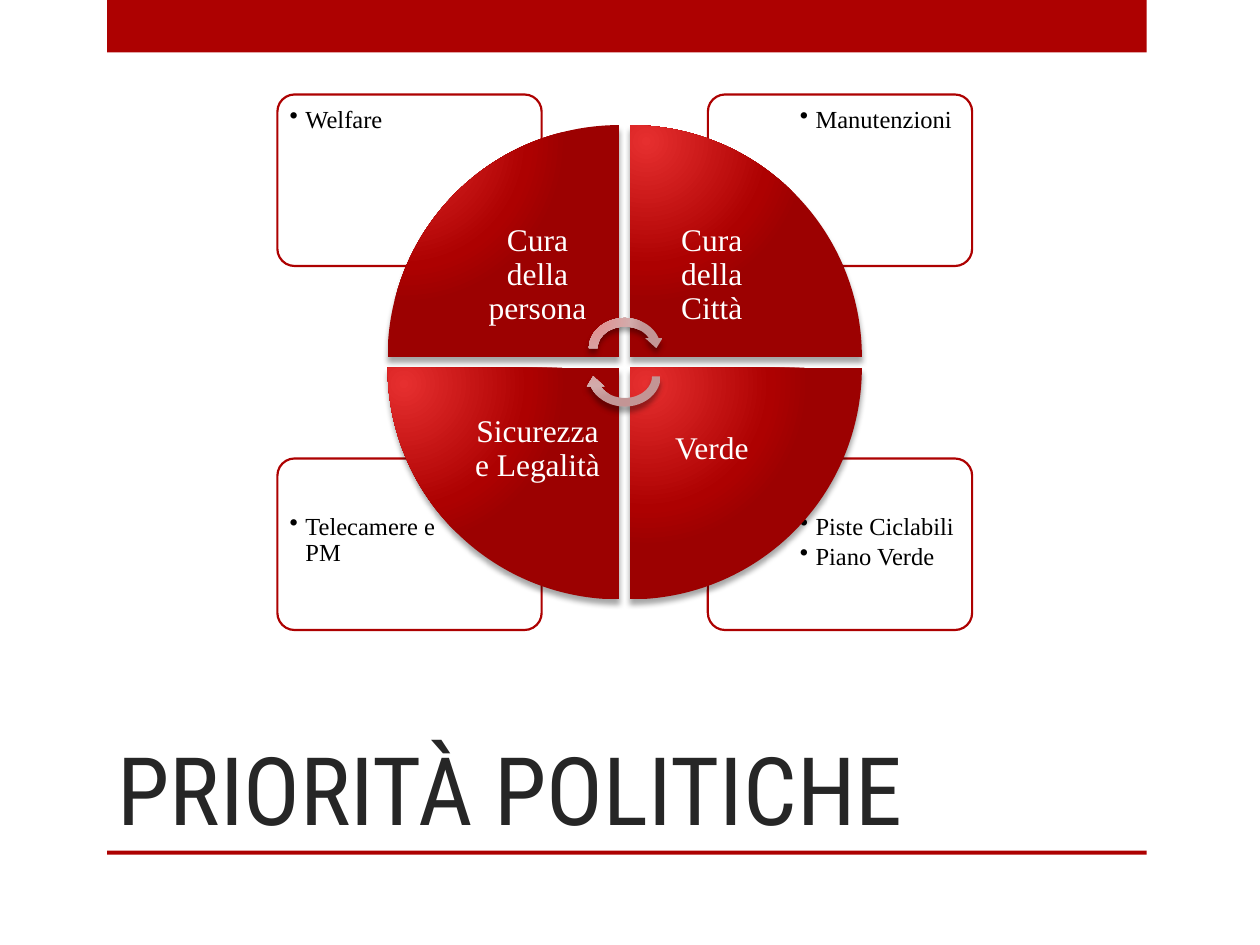
"""Build the slide of political priorities as a four-part cycle."""
import pptx
import pptx.util
import pptx.oxml
import pptx.oxml.ns
import pptx.dml.color
import pptx.enum.shapes
import pptx.enum.text

Pt = pptx.util.Pt
SHAPES = pptx.enum.shapes.MSO_SHAPE
ALIGN = pptx.enum.text.PP_ALIGN
ANCHOR = pptx.enum.text.MSO_ANCHOR
NAMESPACE = pptx.oxml.ns.nsdecls("a")

TITLE = "PRIORITÀ POLITICHE"
QUADRANTS = [
    {"column": 0, "row": 0, "turn": 0, "name": "Cura della persona", "items": ["Welfare"]},
    {"column": 1, "row": 0, "turn": 90, "name": "Cura della Città", "items": ["Manutenzioni"]},
    {"column": 1, "row": 1, "turn": 180, "name": "Verde", "items": ["Piste Ciclabili", "Piano Verde"]},
    {"column": 0, "row": 1, "turn": 270, "name": "Sicurezza e Legalità", "items": ["Telecamere e PM"]},
]
COLORS = {"red": "AD0101", "white": "FFFFFF", "black": "000000", "title": "262626"}
WEDGE_STOPS = [(0, "E62F2F"), (76, "AD0101"), (100, "9C0101")]
ARROW_STOPS = [(0, "E68989"), (76, "D3ABAB"), (100, "C39595")]
BARS = [(0, 30), (486, 2.4)]
CENTER_X, CENTER_Y = 357, 207
PANEL = (47.5, 55, 151, 98)
ITEMS = (95, 81.7, 101.5, 69)
WEDGE = (3, 3, 132.5, 132.5)
NAME = (3, 3, 93.6, 93.6)
ARROW_WIDTH, ARROW_HEIGHT, ARROW_SHIFT = 46, 39.6, 8


def color(name):
    return pptx.dml.color.RGBColor.from_string(COLORS[name])


def place(quadrant, size):
    """Mirror a box about the cycle's center and return its frame."""
    gap_x, gap_y, width, height = size
    left = CENTER_X + (gap_x if quadrant["column"] else -gap_x - width)
    top = CENTER_Y + (gap_y if quadrant["row"] else -gap_y - height)
    return Pt(left), Pt(top), Pt(width), Pt(height)


def add_solid(page, kind, frame, fill):
    shape = page.shapes.add_shape(kind, *frame)
    shape.shadow.inherit = False
    shape.fill.solid()
    shape.fill.fore_color.rgb = color(fill)
    shape.line.fill.background()
    return shape


def add_glossy(page, kind, frame, stops, turn):
    shape = add_solid(page, kind, frame, "red")
    shape.rotation = turn
    marks = "".join(
        f'<a:gs pos="{share * 1000}"><a:srgbClr val="{tone}"/></a:gs>' for share, tone in stops
    )
    gradient = pptx.oxml.parse_xml(
        f'<a:gradFill {NAMESPACE} rotWithShape="0"><a:gsLst>{marks}</a:gsLst><a:path path="circle">'
        '<a:fillToRect l="15000" t="15000" r="100000" b="100000"/></a:path></a:gradFill>'
    )
    shadow = pptx.oxml.parse_xml(
        f'<a:outerShdw {NAMESPACE} blurRad="{Pt(3)}" dist="{Pt(3)}" dir="5400000" rotWithShape="0">'
        f'<a:srgbClr val="{COLORS["black"]}"><a:alpha val="35000"/></a:srgbClr></a:outerShdw>'
    )
    properties = shape.element.spPr
    properties.replace(properties.find(pptx.oxml.ns.qn("a:solidFill")), gradient)
    properties.find(pptx.oxml.ns.qn("a:effectLst")).append(shadow)


def add_text(page, frame, lines, size, tone, inset, after):
    box = page.shapes.add_textbox(*frame).text_frame
    box.word_wrap = True
    box.margin_left = box.margin_right = box.margin_top = box.margin_bottom = Pt(inset)
    box.text = "\n".join(lines)
    for para in box.paragraphs:
        para.line_spacing = 0.9
        para.space_after = Pt(after)
        para.font.name = "Times New Roman"
        para.font.size = Pt(size)
        para.font.color.rgb = color(tone)
    return box


def add_panel(page, quadrant):
    panel = add_solid(page, SHAPES.ROUNDED_RECTANGLE, place(quadrant, PANEL), "white")
    panel.adjustments[0] = 0.1
    panel.line.color.rgb = color("red")
    panel.line.width = Pt(1.25)
    box = add_text(page, place(quadrant, ITEMS), quadrant["items"], 14, "black", 5, 2.1)
    for para in box.paragraphs:
        properties = para._p.get_or_add_pPr()
        properties.set("marL", str(Pt(9)))
        properties.set("indent", str(Pt(-9)))
        bullet = pptx.oxml.parse_xml(f'<a:buChar {NAMESPACE} char="•"/>')
        properties.find(pptx.oxml.ns.qn("a:defRPr")).addprevious(bullet)


def add_wedge(page, quadrant):
    add_glossy(page, SHAPES.PIE_WEDGE, place(quadrant, WEDGE), WEDGE_STOPS, quadrant["turn"])
    box = add_text(page, place(quadrant, NAME), [quadrant["name"]], 18, "white", 10, 6.3)
    box.vertical_anchor = ANCHOR.MIDDLE
    box.paragraphs[0].alignment = ALIGN.CENTER


def add_title(page):
    title = page.shapes.title
    title.left, title.top, title.width, title.height = Pt(60), Pt(360), Pt(534), Pt(126)
    box = title.text_frame
    box.text = TITLE
    box.auto_size = pptx.enum.text.MSO_AUTO_SIZE.NONE
    box.vertical_anchor = ANCHOR.BOTTOM
    para = box.paragraphs[0]
    para.alignment = ALIGN.LEFT
    para.font.name = "Roboto Condensed"
    para.font.size = Pt(54)
    para.font.color.rgb = color("title")


def main():
    deck = pptx.Presentation()
    deck.slide_width, deck.slide_height = Pt(720), Pt(540)
    page = deck.slides.add_slide(deck.slide_layouts[5])
    for top, height in BARS:
        add_solid(page, SHAPES.RECTANGLE, (Pt(61.2), Pt(top), Pt(594), Pt(height)), "red")
    add_title(page)
    for quadrant in reversed(QUADRANTS):
        add_panel(page, quadrant)
    for quadrant in QUADRANTS:
        add_wedge(page, quadrant)
    for shift, turn in ((-ARROW_SHIFT, 0), (ARROW_SHIFT, 180)):
        left = CENTER_X - ARROW_WIDTH / 2
        top = CENTER_Y + shift - ARROW_HEIGHT / 2
        frame = (Pt(left), Pt(top), Pt(ARROW_WIDTH), Pt(ARROW_HEIGHT))
        add_glossy(page, SHAPES.CIRCULAR_ARROW, frame, ARROW_STOPS, turn)
    deck.save("out.pptx")


if __name__ == "__main__":
    main()
